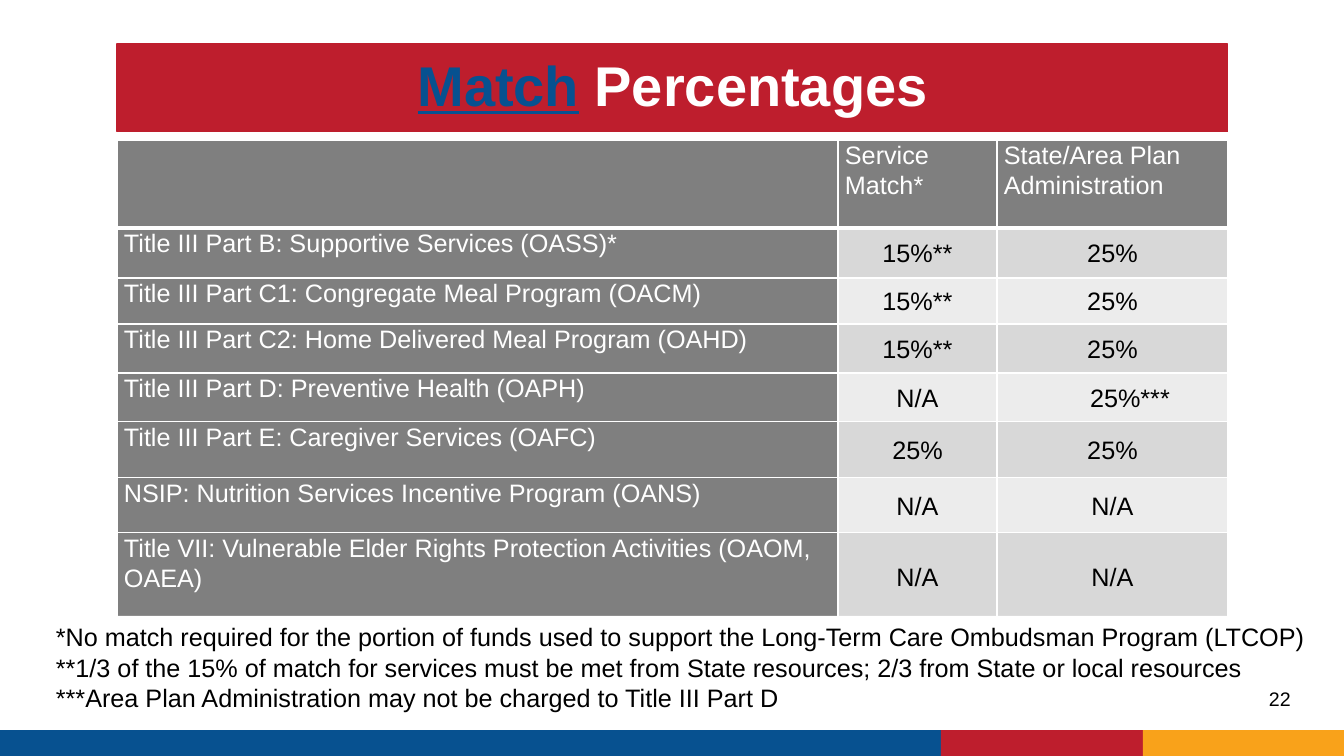
from lxml.etree import SubElement
from pptx import Presentation
from pptx.dml.color import RGBColor
from pptx.enum.shapes import MSO_SHAPE as Preset
from pptx.enum.text import MSO_ANCHOR as Anchor, MSO_AUTO_SIZE as AutoSize, PP_ALIGN as Align
from pptx.oxml.ns import qn
from pptx.util import Emu, Pt

BLUE = RGBColor(0x07, 0x51, 0x90)
RED = RGBColor(0xBE, 0x1E, 0x2D)
ORANGE = RGBColor(0xF9, 0xA2, 0x1A)
GRAY = RGBColor(0x7F, 0x7F, 0x7F)
BAND_DARK = RGBColor(0xD8, 0xD8, 0xD8)
BAND_LIGHT = RGBColor(0xEC, 0xEC, 0xEC)
WHITE = RGBColor(0xFF, 0xFF, 0xFF)
BLACK = RGBColor(0, 0, 0)

COLUMN_WIDTHS = [721, 159, 231]
ROW_HEIGHTS = [88, 50, 46, 49, 49, 56, 55, 88]
ROWS = [
    ("", "Service Match*", "State/Area Plan Administration"),
    ("Title III Part B: Supportive Services (OASS)*", "15%**", "25%"),
    ("Title III Part C1: Congregate Meal Program (OACM)", "15%**", "25%"),
    ("Title III Part C2: Home Delivered Meal Program (OAHD)", "15%**", "25%"),
    ("Title III Part D: Preventive Health (OAPH)", "N/A", "25%***"),
    ("Title III Part E: Caregiver Services (OAFC)", "25%", "25%"),
    ("NSIP: Nutrition Services Incentive Program (OANS)", "N/A", "N/A"),
    ("Title VII: Vulnerable Elder Rights Protection Activities (OAOM, OAEA)", "N/A", "N/A"),
]
NOTES = [
    "*No match required for the portion of funds used to support the Long-Term Care Ombudsman Program (LTCOP)",
    "**1/3 of the 15% of match for services must be met from State resources; 2/3 from State or local resources",
    "***Area Plan Administration may not be charged to Title III Part D",
]


def px(*lengths):
    """Turn pixels, 100.8 to the inch, into a list of EMU lengths."""
    return [Emu(round(length * 914400 / 100.8)) for length in lengths]


def set_font(font, size, color, bold=False):
    font.name = "Arial"
    font.size = Pt(size)
    font.bold = bold
    font.color.rgb = color


presentation = Presentation()
presentation.slide_width, presentation.slide_height = px(1344, 756)
slide = presentation.slides.add_slide(presentation.slide_layouts[5])

# Footer bars
for left, width, color in [(0, 941, BLUE), (941, 202, RED), (1143, 201, ORANGE)]:
    bar = slide.shapes.add_shape(Preset.RECTANGLE, *px(left, 730, width, 26))
    bar.shadow.inherit = False
    bar.fill.solid()
    bar.fill.fore_color.rgb = color
    bar.line.fill.background()

# Title
title = slide.shapes.title
title.left, title.top, title.width, title.height = px(117, 44, 1111, 88)
title.fill.solid()
title.fill.fore_color.rgb = RED
title.line.color.rgb = RED
title.line.width = Pt(0.75)
title.text_frame.auto_size = AutoSize.NONE
title.text_frame.vertical_anchor = Anchor.MIDDLE
paragraph = title.text_frame.paragraphs[0]
paragraph.alignment = Align.CENTER
paragraph.line_spacing = 0.9
for text, color, underline in [("Match", BLUE, True), (" Percentages", WHITE, False)]:
    run = paragraph.add_run()
    run.text = text
    set_font(run.font, 40, color, bold=True)
    run.font.underline = underline

# Match table
table = slide.shapes.add_table(
    len(ROWS), len(COLUMN_WIDTHS), *px(117, 140, sum(COLUMN_WIDTHS), sum(ROW_HEIGHTS))
).table
for column, width in zip(table.columns, px(*COLUMN_WIDTHS)):
    column.width = width
for row, height in zip(table.rows, px(*ROW_HEIGHTS)):
    row.height = height

for row_index, texts in enumerate(ROWS):
    for column_index, text in enumerate(texts):
        cell = table.cell(row_index, column_index)
        is_header = row_index == 0 or column_index == 0
        indent = 35 if text == "25%***" else 0
        cell.margin_left, cell.margin_top, cell.margin_right, cell.margin_bottom = px(7 + indent, 0, 7, 0)
        cell.vertical_anchor = Anchor.TOP if is_header else Anchor.MIDDLE
        cell.text_frame.text = text
        paragraph = cell.text_frame.paragraphs[0]
        paragraph.alignment = Align.LEFT if is_header else Align.CENTER
        paragraph.line_spacing = 1.07
        set_font(paragraph.font, 18, WHITE if is_header else BLACK)
        for run in paragraph.runs:
            set_font(run.font, 18, WHITE if is_header else BLACK)

        heavy_side = {0: "lnB", 1: "lnT"}.get(row_index)
        properties = cell._tc.get_or_add_tcPr()
        for side in ("lnL", "lnR", "lnT", "lnB"):
            border = SubElement(properties, qn(f"a:{side}"), w=str(Pt(3 if side == heavy_side else 1)))
            SubElement(SubElement(border, qn("a:solidFill")), qn("a:srgbClr"), val=str(WHITE))
        cell.fill.solid()
        band = BAND_DARK if row_index % 2 else BAND_LIGHT
        cell.fill.fore_color.rgb = GRAY if is_header else band

# Footnotes, on a white ground over the foot of the table
footnotes = slide.shapes.add_textbox(*px(46, 616, 1277, 102))
footnotes.fill.solid()
footnotes.fill.fore_color.rgb = WHITE
footnotes.text_frame.word_wrap = True
footnotes.text_frame.vertical_anchor = Anchor.MIDDLE
footnotes.text_frame.text = "\n".join(NOTES)
for paragraph in footnotes.text_frame.paragraphs:
    set_font(paragraph.runs[0].font, 18, BLACK)

# Slide number
slide_number = slide.shapes.add_textbox(*px(1259, 682, 65, 34))
slide_number.text_frame.word_wrap = True
slide_number.text_frame.text = "22"
set_font(slide_number.text_frame.paragraphs[0].runs[0].font, 14, BLACK)

presentation.save("out.pptx")
